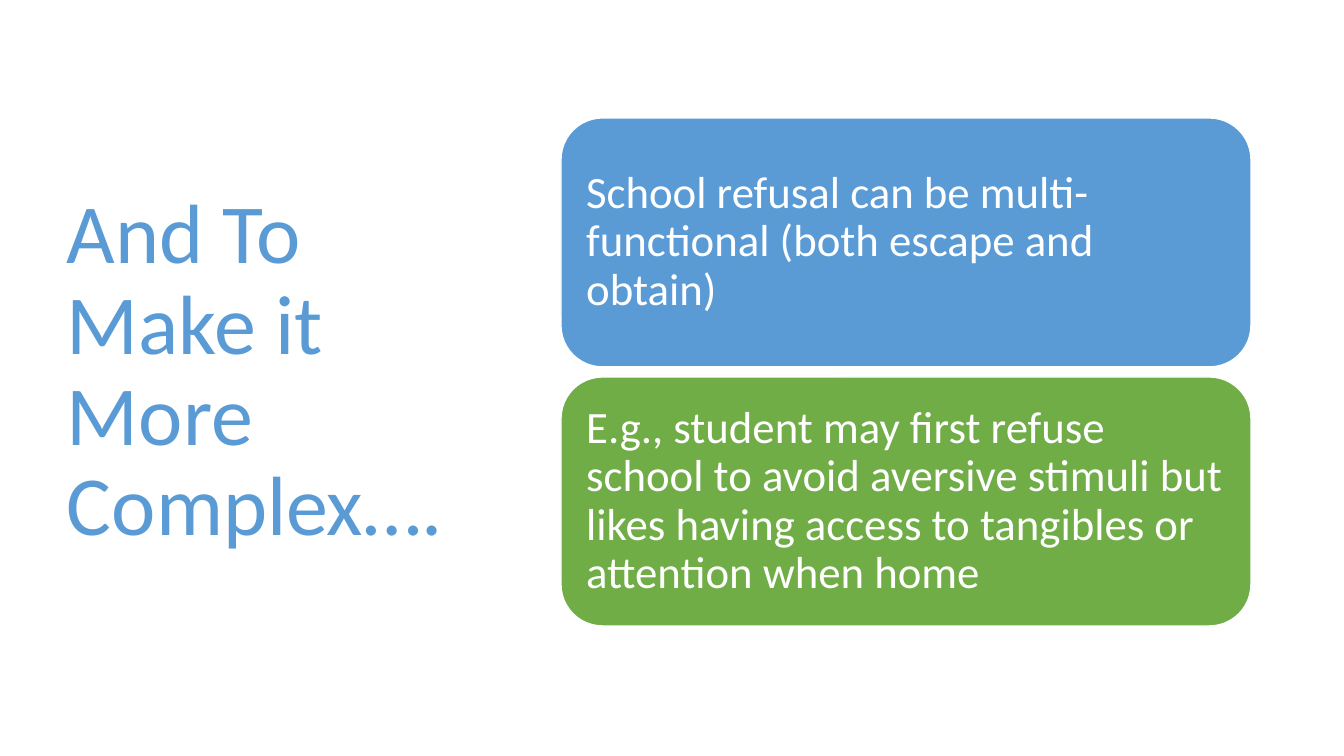
from pptx import Presentation
from pptx.dml.color import RGBColor as RGB
from pptx.enum.shapes import MSO_SHAPE as Shape
from pptx.enum.text import MSO_ANCHOR as Anchor, MSO_AUTO_SIZE as Fit, PP_ALIGN as Align
from pptx.util import Emu, Pt

COLORS = {"blue": "5B9BD5", "green": "70AD47", "white": "FFFFFF"}


def px(n):
    return Emu(round(n * 914400 / 100.8))


def write(frame, text, size, color, pad):
    frame.word_wrap = True
    frame.auto_size = Fit.NONE
    frame.vertical_anchor = Anchor.MIDDLE
    frame.margin_left = frame.margin_right = px(pad)
    frame.margin_top = frame.margin_bottom = px(pad)
    para = frame.paragraphs[0]
    para.alignment = Align.LEFT
    para.line_spacing = 0.9
    run = para.add_run()
    run.text = text
    run.font.name = "Calibri"
    run.font.size = Pt(size)
    run.font.color.rgb = RGB.from_string(COLORS[color])


deck = Presentation()
deck.slide_width, deck.slide_height = px(1344), px(756)
slide = deck.slides.add_slide(deck.slide_layouts[5])

# Title on the left
title = slide.shapes.title
title.left, title.top, title.width, title.height = px(57), px(69), px(419), px(607)
write(title.text_frame, "And To Make it More Complex….", 60, "blue", 10)

# Stacked cards on the right
cards = [
    ("blue", "School refusal can be multi-functional (both escape and obtain)"),
    ("green", "E.g., student may first refuse school to avoid aversive stimuli "
              "but likes having access to tangibles or attention when home"),
]
for i, (color, text) in enumerate(cards):
    card = slide.shapes.add_shape(
        Shape.ROUNDED_RECTANGLE, px(561), px(118 + 259 * i), px(690), px(249))
    card.shadow.inherit = False
    card.fill.solid()
    card.fill.fore_color.rgb = RGB.from_string(COLORS[color])
    card.line.color.rgb = RGB.from_string(COLORS["white"])
    card.line.width = Pt(1)
    # The rounded corners add about 12 px to the text inset
    write(card.text_frame, text, 32, "white", 13)

deck.save("out.pptx")
